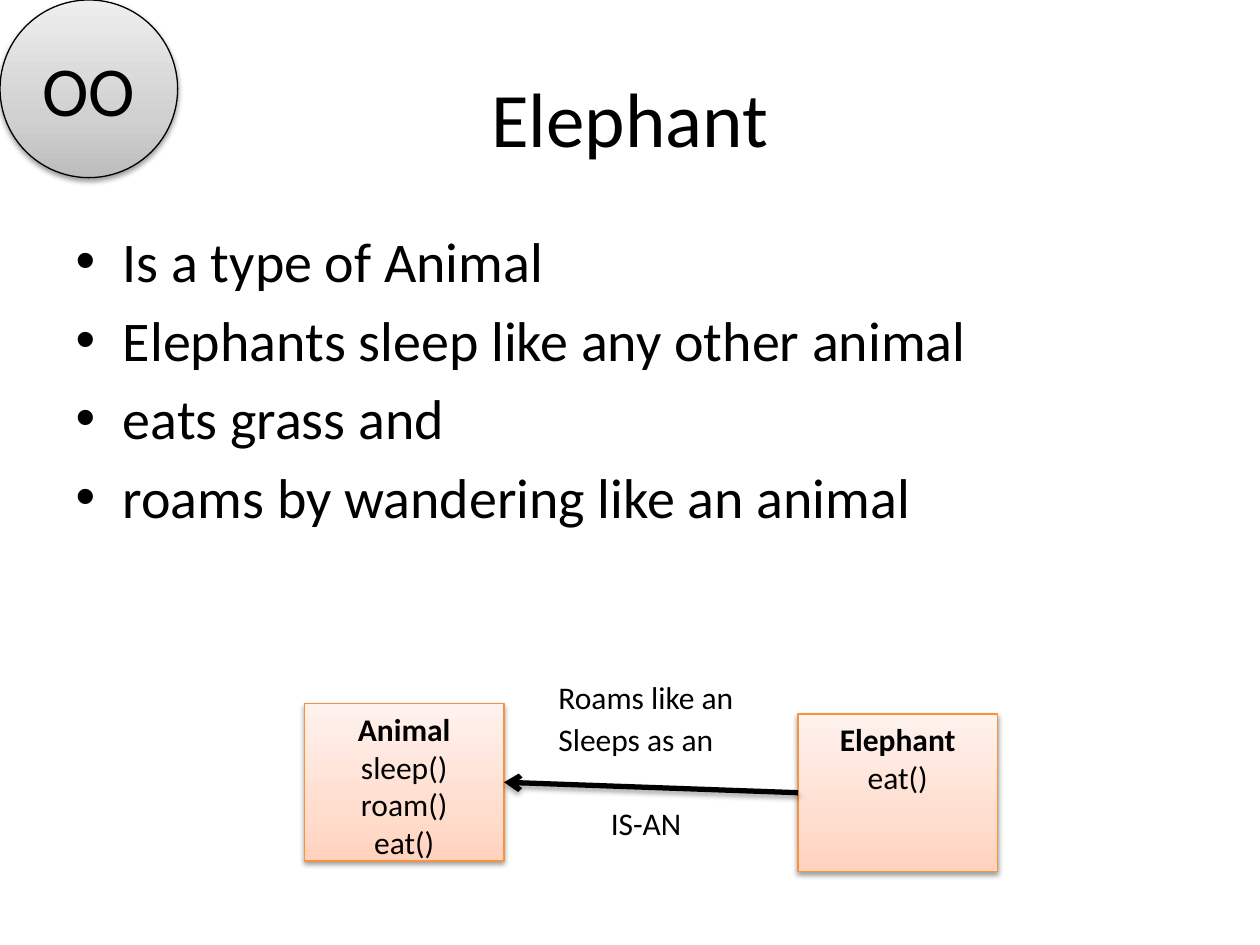
from lxml import etree
from pptx import Presentation
from pptx import util as u
from pptx.dml.color import RGBColor
from pptx.enum import shapes, text
from pptx.oxml import ns

THEME = {
    "font": "Calibri",
    "ink": "000000",
    "title": 44, "body": 32, "badge": 40, "label": 18,
    "orange": {"stops": [(0, "FFD2BD"), (35, "FFDED0"), (100, "FFF2ED")], "line": "F69240"},
    "gray": {"stops": [(0, "BDBDBD"), (35, "D1D1D1"), (100, "EEEEEE")], "line": "000000"},
}
PAGE_SIZE = (720, 540)
TITLE = ("Elephant", (36, 21.6, 648, 90))
BULLETS = (
    ["Is a type of Animal", "Elephants sleep like any other animal",
     "eats grass and", "roams by wandering like an animal"],
    (36, 126, 648, 276),
)
CLASS_SIZE = (114, 90)
CLASSES = {
    "Animal": {"at": (174, 402), "methods": ["sleep()", "roam()", "eat()"]},
    "Elephant": {"at": (456, 408), "methods": ["eat()"]},
}
INHERITANCE = ("Elephant", "Animal")
LABELS = [
    ("IS-AN", (342, 456, 78, 29)),
    ("Sleeps as an", (312, 408, 114, 29)),
    ("Roams like an", (312, 384, 126, 29)),
]
BADGE = ("OO", (0, 0, 101.5, 101.5))


def points(values):
    return [u.Pt(value) for value in values]


def write(box, lines, size, align=text.PP_ALIGN.LEFT, anchor=text.MSO_ANCHOR.TOP, bold_first=False):
    frame = box.text_frame
    frame.word_wrap = True
    frame.vertical_anchor = anchor
    for index, line in enumerate(lines):
        para = frame.add_paragraph() if index else frame.paragraphs[0]
        para.alignment = align
        span = para.add_run()
        span.text = line
        span.font.name = THEME["font"]
        span.font.size = u.Pt(size)
        span.font.bold = bold_first and index == 0
        span.font.color.rgb = RGBColor.from_string(THEME["ink"])


def add_xml(parent, tag, **attributes):
    return etree.SubElement(parent, ns.qn(tag), {key: str(value) for key, value in attributes.items()})


def add_shadow(item, opacity, distance):
    """Drop a soft black shadow straight down; call after the line is set."""
    effects = add_xml(item._element.spPr, "a:effectLst")
    shadow = add_xml(effects, "a:outerShdw", blurRad=u.Pt(3.1), dist=u.Pt(distance),
                     dir=5400000, rotWithShape=0)
    add_xml(add_xml(shadow, "a:srgbClr", val=THEME["ink"]), "a:alpha", val=opacity * 1000)


def add_panel(page, kind, frame, style):
    panel = page.shapes.add_shape(kind, *points(frame))
    panel.fill.gradient()
    panel.fill.gradient_angle = 90
    stops = panel._element.spPr.find(".//" + ns.qn("a:gsLst"))
    for stop in list(stops):
        stops.remove(stop)
    for position, color in style["stops"]:
        add_xml(add_xml(stops, "a:gs", pos=position * 1000), "a:srgbClr", val=color)
    panel.line.color.rgb = RGBColor.from_string(style["line"])
    panel.line.width = u.Pt(0.75)
    add_shadow(panel, 38, 1.6)
    return panel


def add_arrow(page, source, target):
    """Join the left side of source to the right side of target."""
    arrow = page.shapes.add_connector(shapes.MSO_CONNECTOR.STRAIGHT, 0, 0, 0, 0)
    arrow.begin_connect(source, 1)
    arrow.end_connect(target, 3)
    arrow.line.color.rgb = RGBColor.from_string(THEME["ink"])
    arrow.line.width = u.Pt(3)
    add_xml(arrow.line._get_or_add_ln(), "a:tailEnd", type="arrow")
    add_shadow(arrow, 35, 1.8)


def place(box, frame):
    box.left, box.top, box.width, box.height = points(frame)


def main():
    deck = Presentation()
    deck.slide_width, deck.slide_height = points(PAGE_SIZE)
    page = deck.slides.add_slide(deck.slide_layouts[1])
    center, middle = text.PP_ALIGN.CENTER, text.MSO_ANCHOR.MIDDLE

    title, body = page.shapes.title, page.placeholders[1]
    place(title, TITLE[1])
    write(title, [TITLE[0]], THEME["title"], align=center, anchor=middle)
    place(body, BULLETS[1])
    write(body, BULLETS[0], THEME["body"])

    panels = {}
    for name, details in CLASSES.items():
        panels[name] = add_panel(page, shapes.MSO_SHAPE.RECTANGLE,
                                 details["at"] + CLASS_SIZE, THEME["orange"])
        write(panels[name], [name] + details["methods"], THEME["label"],
              align=center, bold_first=True)
    add_arrow(page, *(panels[name] for name in INHERITANCE))

    for label, frame in LABELS:
        write(page.shapes.add_textbox(*points(frame)), [label], THEME["label"])

    badge = add_panel(page, shapes.MSO_SHAPE.OVAL, BADGE[1], THEME["gray"])
    write(badge, [BADGE[0]], THEME["badge"], align=center, anchor=middle)
    deck.save("out.pptx")


if __name__ == "__main__":
    main()
